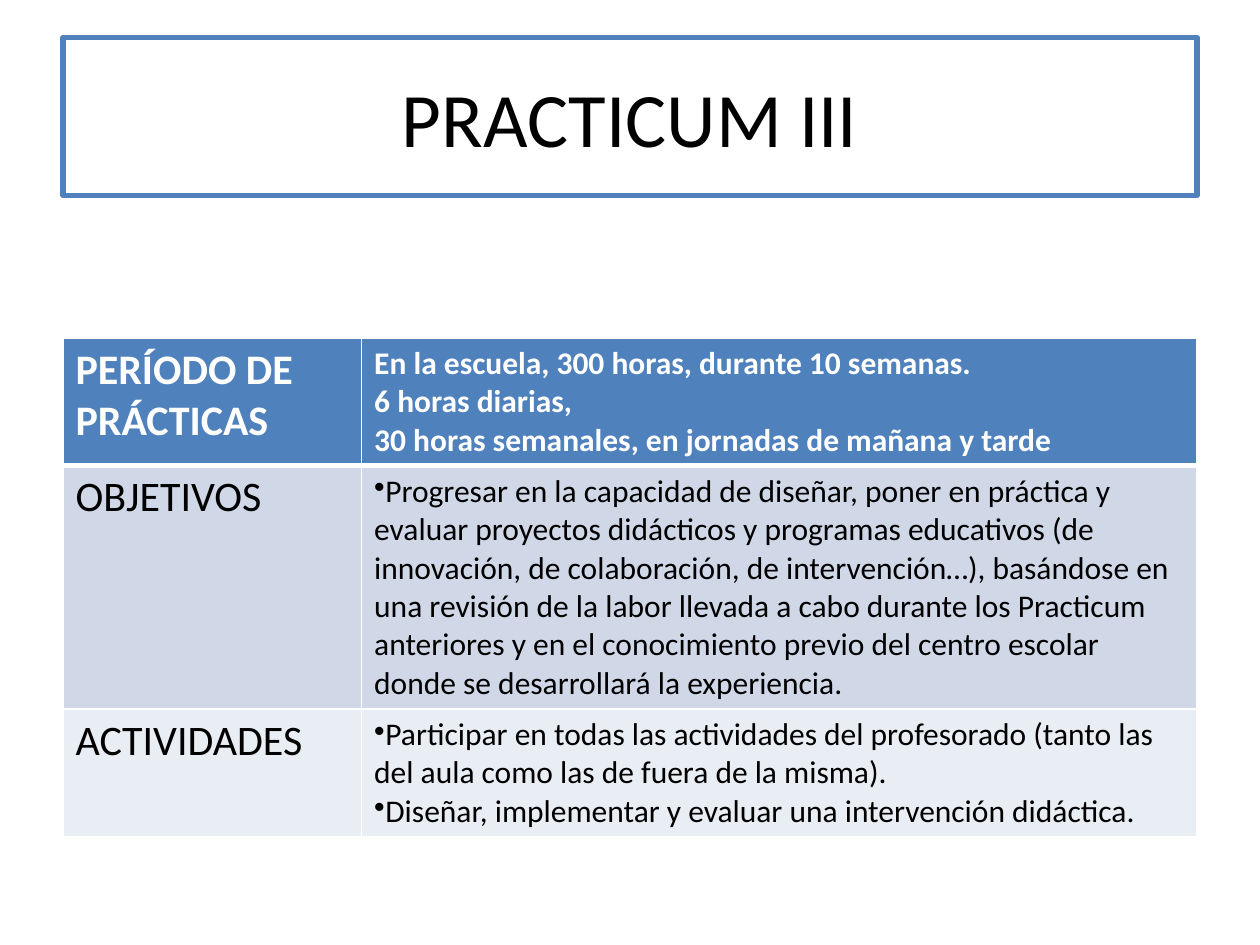
from dataclasses import dataclass

from lxml.etree import SubElement
from pptx import Presentation
from pptx.dml.color import RGBColor
from pptx.enum.text import MSO_ANCHOR, PP_ALIGN
from pptx.oxml.ns import qn
from pptx.util import Cm, Pt

COLORS = {"blue": "4F81BD", "pale": "D0D8E8", "light": "E9EDF4",
          "white": "FFFFFF", "black": "000000"}


@dataclass
class Row:
    label: str
    lines: list[str]
    height: float
    fill: str
    head: bool = False


ROWS = [
    Row("PERÍODO DE PRÁCTICAS",
        ["En la escuela, 300 horas, durante 10 semanas.",
         "6 horas diarias,",
         "30 horas semanales, en jornadas de mañana y tarde"],
        2.57, "blue", True),
    Row("OBJETIVOS",
        ["Progresar en la capacidad de diseñar, poner en práctica y evaluar "
         "proyectos didácticos y programas educativos (de innovación, de "
         "colaboración, de intervención…), basándose en una revisión de la "
         "labor llevada a cabo durante los Practicum anteriores y en el "
         "conocimiento previo del centro escolar donde se desarrollará la "
         "experiencia."],
        4.9, "pale"),
    Row("ACTIVIDADES",
        ["Participar en todas las actividades del profesorado (tanto las del "
         "aula como las de fuera de la misma).",
         "Diseñar, implementar y evaluar una intervención didáctica."],
        2.57, "light"),
]


def color(name: str) -> RGBColor:
    return RGBColor.from_string(COLORS[name])


def style(font, tint: str, **form) -> None:
    for key, value in {"name": "Calibri", **form}.items():
        setattr(font, key, value)
    font.color.rgb = color(tint)


def border(cell, top: float, base: float) -> None:
    props = cell._tc.get_or_add_tcPr()
    for side, width in {"L": 1, "R": 1, "T": top, "B": base}.items():
        line = SubElement(props, qn(f"a:ln{side}"), w=str(Pt(width)))
        fill = SubElement(line, qn("a:solidFill"))
        SubElement(fill, qn("a:srgbClr"), val=COLORS["white"])


def bullet(para) -> None:
    props = para._p.get_or_add_pPr()
    props.set("marL", "0")
    props.set("indent", "0")
    SubElement(props, qn("a:buChar"), char="•")


def write(cell, lines: list[str], size: int, head: bool, dots: bool) -> None:
    cell.text = "\n".join(lines)
    for para in cell.text_frame.paragraphs:
        if dots:
            bullet(para)
        for run in para.runs:
            style(run.font, "white" if head else "black", size=Pt(size), bold=head)


def draw_title(slide) -> None:
    title = slide.shapes.title
    place = {"left": Cm(1.27), "top": Cm(0.76), "width": Cm(22.86), "height": Cm(3.18)}
    for key, value in place.items():
        setattr(title, key, value)
    title.line.color.rgb = color("blue")
    title.line.width = Pt(3)
    frame = title.text_frame
    frame.text = "PRACTICUM III"
    frame.vertical_anchor = MSO_ANCHOR.MIDDLE
    para = frame.paragraphs[0]
    para.alignment = PP_ALIGN.CENTER
    style(para.runs[0].font, "black", size=Pt(44))


def draw_table(slide, rows: list[Row]) -> None:
    total = sum(row.height for row in rows)
    table = slide.shapes.add_table(
        len(rows), 2, Cm(1.27), Cm(6.81), Cm(22.86), Cm(total)).table
    for col, width in zip(table.columns, (6.02, 16.84)):
        col.width = Cm(width)
    for i, row in enumerate(rows):
        table.rows[i].height = Cm(row.height)
        label, body = table.rows[i].cells
        write(label, [row.label], 24, row.head, False)
        write(body, row.lines, 18, row.head, not row.head)
        for cell in (label, body):
            border(cell, 3 if i == 1 else 1, 3 if row.head else 1)
            cell.fill.solid()
            cell.fill.fore_color.rgb = color(row.fill)


def main() -> None:
    deck = Presentation()
    deck.slide_width, deck.slide_height = Cm(25.4), Cm(19.05)
    slide = deck.slides.add_slide(deck.slide_layouts[5])
    draw_title(slide)
    draw_table(slide, ROWS)
    deck.save("out.pptx")


if __name__ == "__main__":
    main()
